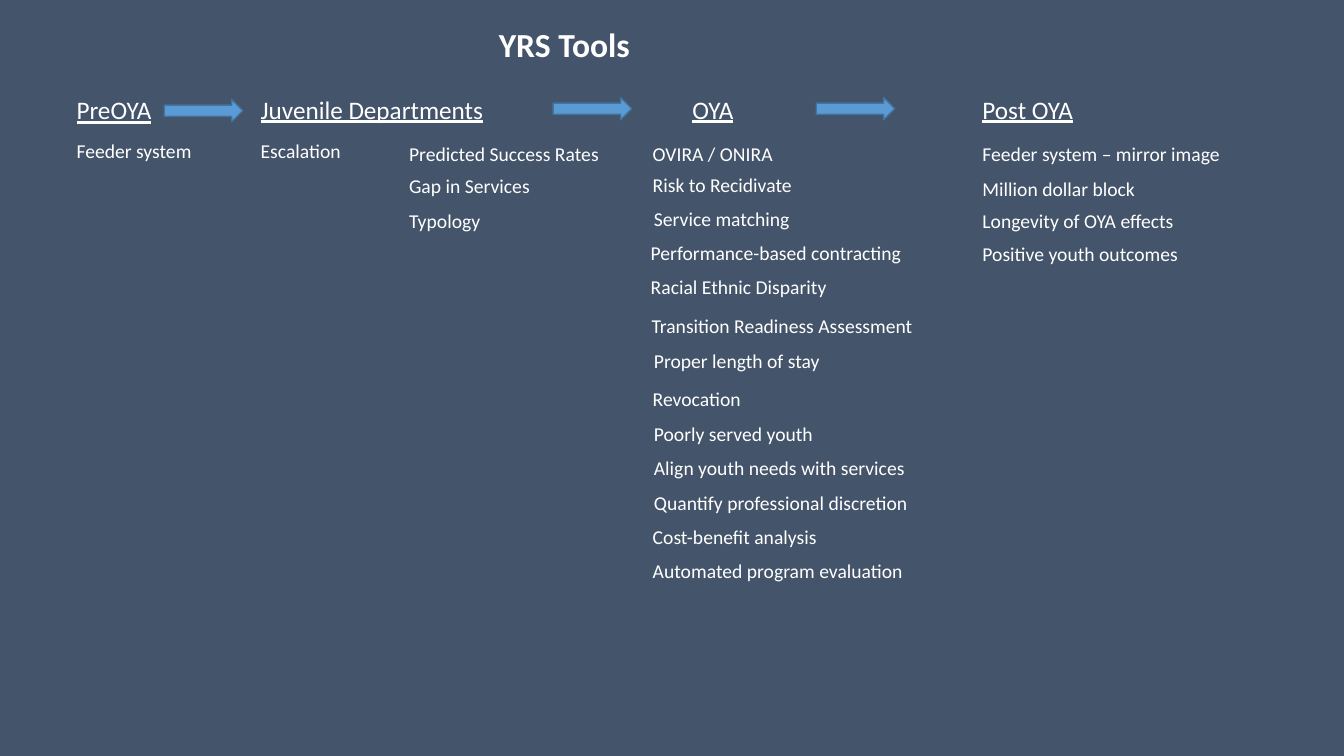
from pptx import Presentation
from pptx import util as u
from pptx.dml.color import RGBColor
from pptx.enum import shapes, text

BACKGROUND = RGBColor(0x44, 0x54, 0x6A)
WHITE = RGBColor(0xFF, 0xFF, 0xFF)
ARROW_FILL = RGBColor(0x5B, 0x9B, 0xD5)
ARROW_LINE = RGBColor(0x43, 0x73, 0x9E)
FONT = "Calibri"

# Heading: text, left, top, width
HEADINGS = [
    ("PreOYA", 1.68, 2.26, 3.35),
    ("Juvenile Departments", 6.32, 2.24, 6.5),
    ("OYA", 17.2, 2.24, 2.62),
    ("Post OYA", 24.51, 2.24, 3.28),
]

# Column: left, top, width, then each tool with its offset right and down
COLUMNS = [
    (1.68, 3.38, 4.29, [("Feeder system", 0, 0)]),
    (6.32, 3.38, 3.7, [("Escalation", 0, 0)]),
    (10.06, 3.45, 6.1, [
        ("Predicted Success Rates", 0, 0),
        ("Gap in Services", 0, 0.82),
        ("Typology", 0, 1.68),
    ]),
    (16.2, 3.45, 8, [
        ("OVIRA / ONIRA", 0, 0),
        ("Risk to Recidivate", 0, 0.79),
        ("Service matching", 0.03, 1.65),
        ("Performance-based contracting", -0.05, 2.49),
        ("Racial Ethnic Disparity", -0.05, 3.35),
        ("Transition Readiness Assessment", -0.03, 4.34),
        ("Proper length of stay", 0.03, 5.21),
        ("Revocation", 0, 6.18),
        ("Poorly served youth", 0.03, 7.06),
        ("Align youth needs with services", 0.03, 7.92),
        ("Quantify professional discretion", 0.03, 8.79),
        ("Cost-benefit analysis", 0, 9.65),
        ("Automated program evaluation", 0, 10.52),
    ]),
    (24.51, 3.45, 7, [
        ("Feeder system – mirror image", 0, 0),
        ("Million dollar block", 0, 0.88),
        ("Longevity of OYA effects", 0, 1.68),
        ("Positive youth outcomes", 0, 2.51),
    ]),
]

ARROWS = [(4.14, 2.51), (13.94, 2.46), (20.57, 2.46)]


def add_text(slide, wording, left, top, width, height=0.86, size=14,
             bold=False, underline=False):
    """Add a one-line white text box, measured in centimetres."""
    box = slide.shapes.add_textbox(u.Cm(left), u.Cm(top), u.Cm(width), u.Cm(height))
    frame = box.text_frame
    frame.word_wrap = True
    frame.auto_size = text.MSO_AUTO_SIZE.SHAPE_TO_FIT_TEXT
    run = frame.paragraphs[0].add_run()
    run.text = wording
    font = run.font
    font.name = FONT
    font.size = u.Pt(size)
    font.bold = bold
    font.underline = underline
    font.color.rgb = WHITE


def add_column(slide, left, top, width, tools):
    """Place the tools of one stage relative to the column's corner."""
    for wording, right, down in tools:
        add_text(slide, wording, left + right, top + down, width)


def add_arrow(slide, left, top, width=1.98, height=0.56):
    """Draw the arrow that leads from one stage to the next."""
    arrow = slide.shapes.add_shape(
        shapes.MSO_SHAPE.RIGHT_ARROW,
        u.Cm(left), u.Cm(top), u.Cm(width), u.Cm(height))
    arrow.shadow.inherit = False
    arrow.fill.solid()
    arrow.fill.fore_color.rgb = ARROW_FILL
    arrow.line.color.rgb = ARROW_LINE
    arrow.line.width = u.Pt(1)


def add_stage_row(slide):
    """Add the underlined stage headings and the arrows between them."""
    for wording, left, top, width in HEADINGS:
        add_text(slide, wording, left, top, width, height=1.02, size=18, underline=True)
    for left, top in ARROWS:
        add_arrow(slide, left, top)


def main():
    """Build the tools overview and save it."""
    presentation = Presentation()
    presentation.slide_width = u.Cm(33.87)
    presentation.slide_height = u.Cm(19.05)
    slide = presentation.slides.add_slide(presentation.slide_layouts[6])
    slide.background.fill.solid()
    slide.background.fill.fore_color.rgb = BACKGROUND
    add_text(slide, "YRS Tools", 12.32, 0.48, 4.19, height=1.27, size=24, bold=True)
    add_stage_row(slide)
    for column in COLUMNS:
        add_column(slide, *column)
    presentation.save("out.pptx")


if __name__ == "__main__":
    main()
